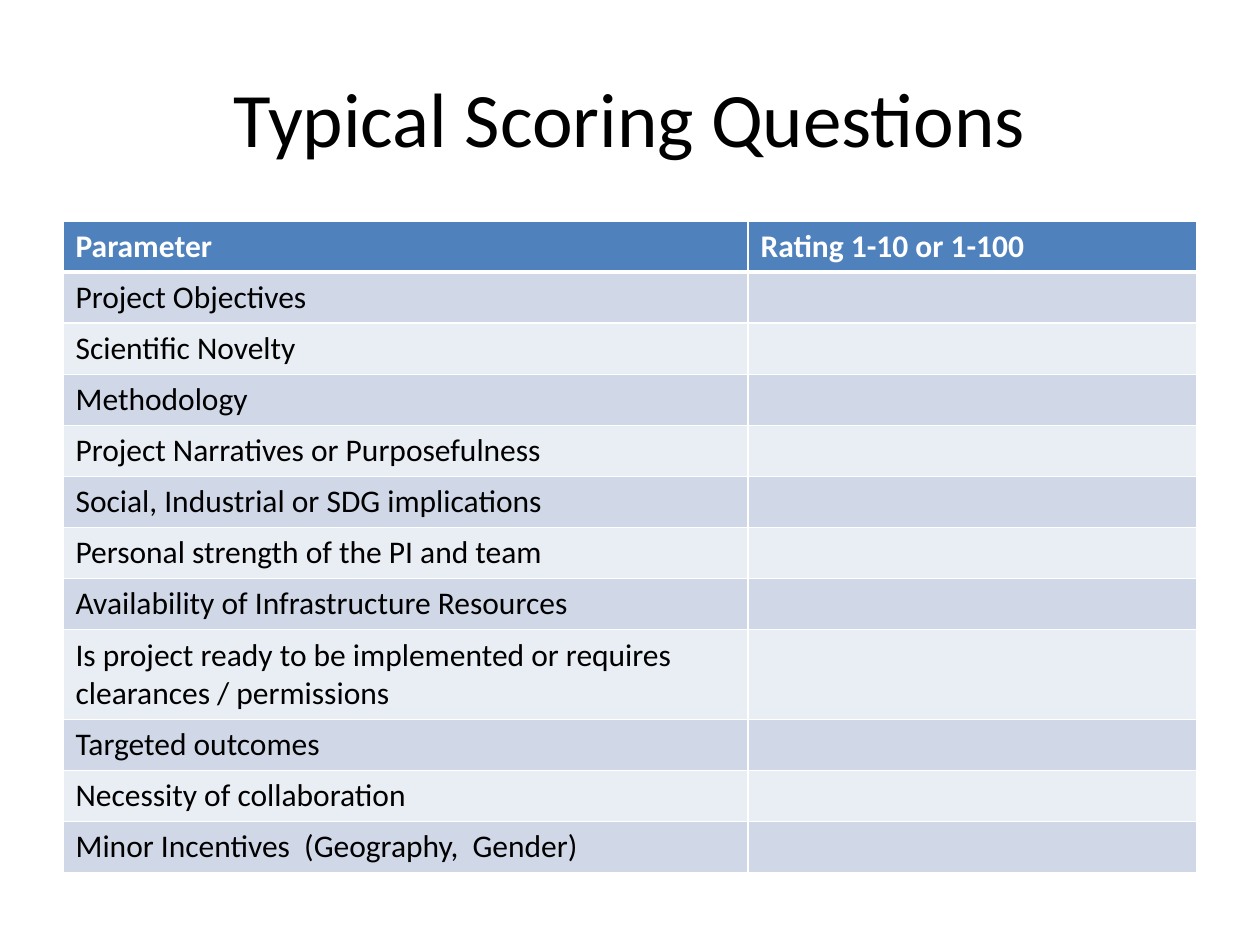
"""Build the slide with the table of typical scoring questions."""
from lxml import etree
from pptx import Presentation, util as u
from pptx.dml.color import RGBColor
from pptx.enum import text
from pptx.oxml import ns

PX = 914400 / 126
WHITE, BLACK, HEADER = "FFFFFF", "000000", "4F81BD"
BANDS = ["E9EDF4", "D0D8E8"]
ROW_H, TALL_H = 51, 89
ROWS = [
    ("Parameter", "Rating 1-10 or 1-100"),
    ("Project Objectives", ""),
    ("Scientific Novelty", ""),
    ("Methodology", ""),
    ("Project Narratives or Purposefulness", ""),
    ("Social, Industrial or SDG implications", ""),
    ("Personal strength of the PI and team", ""),
    ("Availability of Infrastructure Resources", ""),
    ("Is project ready to be implemented or requires clearances / permissions", ""),
    ("Targeted outcomes", ""),
    ("Necessity of collaboration", ""),
    ("Minor Incentives  (Geography,  Gender)", ""),
]
TALL_ROW = 8


def px(n):
    return u.Emu(round(n * PX))


def style(font, size, color, bold=False):
    values = {"name": "Calibri", "size": u.Pt(size), "bold": bold}
    for name, value in values.items():
        setattr(font, name, value)
    font.color.rgb = RGBColor.from_string(color)


prs = Presentation()
prs.slide_width, prs.slide_height = px(1260), px(945)
s = prs.slides.add_slide(prs.slide_layouts[5])

title = s.shapes.title
for name, value in {"left": 63, "top": 38, "width": 1134, "height": 157}.items():
    setattr(title, name, px(value))
tf = title.text_frame
tf.text = "Typical Scoring Questions"
tf.vertical_anchor = text.MSO_ANCHOR.MIDDLE
p = tf.paragraphs[0]
p.alignment = text.PP_ALIGN.CENTER
style(p.runs[0].font, 44, BLACK)

heights = [TALL_H if i == TALL_ROW else ROW_H for i in range(len(ROWS))]
table = s.shapes.add_table(
    len(ROWS), 2, px(63), px(221), px(1134), px(sum(heights))).table
for col, width in zip(table.columns, [685, 449]):
    col.width = px(width)

for i, (row, height) in enumerate(zip(ROWS, heights)):
    table.rows[i].height = px(height)
    header = i == 0
    for j, words in enumerate(row):
        cell = table.cell(i, j)
        tcPr = cell._tc.get_or_add_tcPr()
        borders = {"lnL": 1, "lnR": 1, "lnT": 3 if i == 1 else 1,
                   "lnB": 3 if header else 1}
        for tag, points in borders.items():
            ln = etree.SubElement(tcPr, ns.qn(f"a:{tag}"), w=str(u.Pt(points)))
            fill = etree.SubElement(ln, ns.qn("a:solidFill"))
            etree.SubElement(fill, ns.qn("a:srgbClr"), val=WHITE)
        cell.fill.solid()
        cell.fill.fore_color.rgb = RGBColor.from_string(
            HEADER if header else BANDS[i % 2])
        p = cell.text_frame.paragraphs[0]
        if words:
            r = p.add_run()
            r.text = words
            style(r.font, 18, WHITE if header else BLACK, header)

prs.save("out.pptx")
